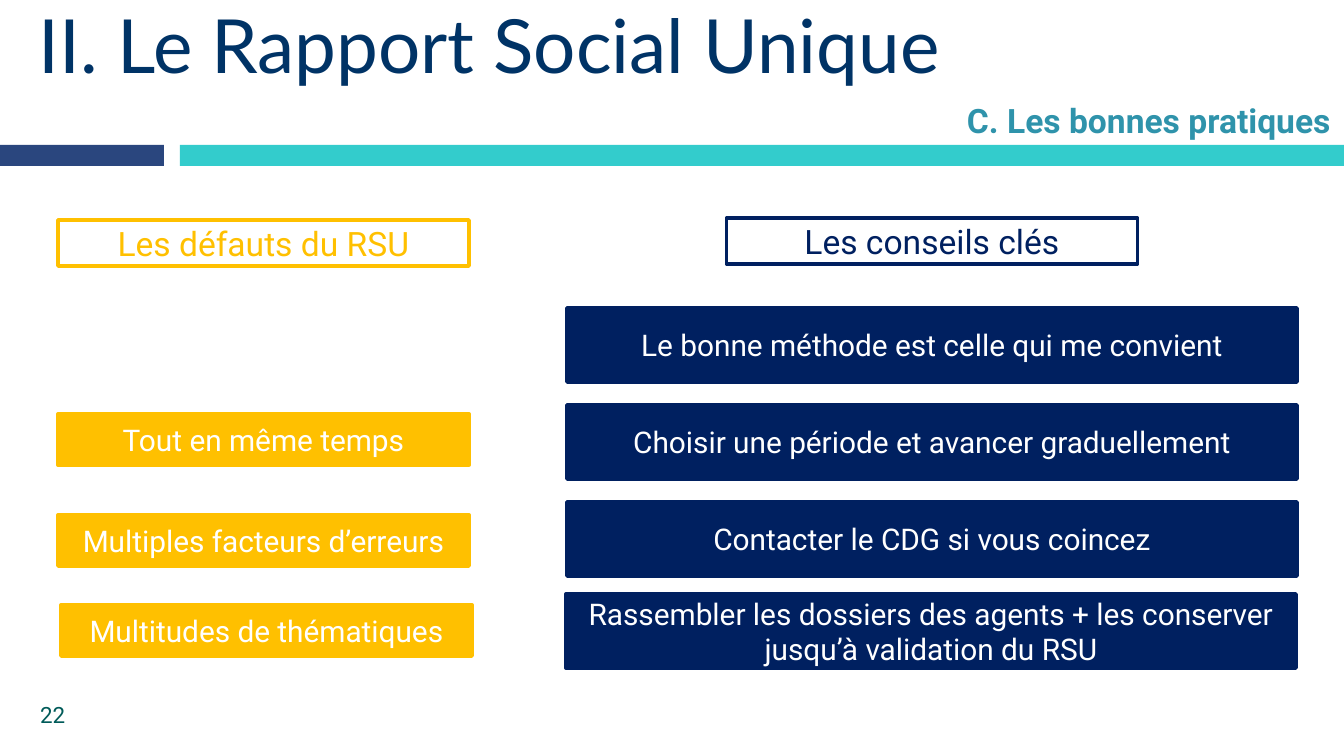
from pptx import Presentation
from pptx.dml.color import RGBColor
from pptx.enum.shapes import MSO_SHAPE as SHAPE
from pptx.enum.text import MSO_ANCHOR as ANCHOR, PP_ALIGN as ALIGN
from pptx.util import Emu, Pt

W, H = 1344, 756
SCALE = 9144000 / W
C = {
    "navy": "002060", "gold": "FFC000", "white": "FFFFFF",
    "title": "003366", "subtitle": "2F93AB", "number": "005B59",
    "bar_dark": "2A467E", "bar_light": "33CCCC",
}


def px(n):
    return Emu(round(n * SCALE))


def rgb(name):
    return RGBColor.from_string(C[name])


def write(sp, text, color, size, align=ALIGN.LEFT, anchor=ANCHOR.MIDDLE,
          **fmt):
    tf = sp.text_frame
    tf.word_wrap = True
    tf.vertical_anchor = anchor
    p = tf.paragraphs[0]
    p.alignment = align
    r = p.add_run()
    r.text = text
    for key, value in {"name": "Roboto", "size": Pt(size), **fmt}.items():
        setattr(r.font, key, value)
    r.font.color.rgb = rgb(color)
    return tf


def add_text(s, box, *args, **fmt):
    sp = s.shapes.add_textbox(*map(px, box))
    return write(sp, *args, **fmt)


def add_rect(s, box, fill=None, line=None):
    sp = s.shapes.add_shape(SHAPE.RECTANGLE, *map(px, box))
    sp.shadow.inherit = False
    if fill:
        sp.fill.solid()
        sp.fill.fore_color.rgb = rgb(fill)
    else:
        sp.fill.background()
    if line:
        sp.line.color.rgb = rgb(line)
        sp.line.width = Pt(2)
    else:
        sp.line.fill.background()
    return sp


def add_header(s, x, y, w, h):
    # Two-colour rule along the bottom of the header
    bar_h, dark_w, gap = 21, 164, 16
    bar_y = y + h - bar_h
    light_x = dark_w + gap
    add_rect(s, (x + light_x, bar_y, w - light_x, bar_h), "bar_light")
    add_rect(s, (x, bar_y, dark_w, bar_h), "bar_dark")
    # Subtitle against the right edge
    add_text(s, (x + w - 677, bar_y - 52, 677, 54), "C. Les bonnes pratiques",
             "subtitle", 18, ALIGN.RIGHT, ANCHOR.TOP, bold=True)
    # Title
    tf = add_text(s, (x - 40, y - 13, 1185, 114),
                  "II. Le Rapport Social Unique", "title", 40, name="Lato")
    tf.margin_left = px(79)


def add_column(s, x, y, w, color, heading, head_w, item_h, items):
    # Outlined heading, centred over the column
    sp = add_rect(s, (x + (w - head_w) / 2, y, head_w, 46), line=color)
    write(sp, heading, color, 18, ALIGN.CENTER)
    # Filled boxes: offset from the column's corner, then text
    for dx, dy, text in items:
        sp = add_rect(s, (x + dx, y + dy, w, item_h), color, color)
        write(sp, text, "white", 16, ALIGN.CENTER)


def add_footer(s, x, y, w, h):
    add_text(s, (x, y, w, h), "22", "number", 12)


def main():
    prs = Presentation()
    prs.slide_width, prs.slide_height = px(W), px(H)
    s = prs.slides.add_slide(prs.slide_layouts[6])

    add_header(s, 0, 0, W, 166)
    add_column(s, 567, 218, 730, "navy", "Les conseils clés", 411, 74, [
        (0, 90, "Le bonne méthode est celle qui me convient"),
        (0, 187, "Choisir une période et avancer graduellement"),
        (0, 284, "Contacter le CDG si vous coincez"),
        (-1, 376, "Rassembler les dossiers des agents + les conserver "
                  "jusqu’à validation du RSU"),
    ])
    add_column(s, 58, 220, 411, "gold", "Les défauts du RSU", 411, 51, [
        (0, 194, "Tout en même temps"),
        (0, 295, "Multiples facteurs d’erreurs"),
        (3, 385, "Multitudes de thématiques"),
    ])
    add_footer(s, 27, 695, 313, 40)
    prs.save("out.pptx")


if __name__ == "__main__":
    main()
